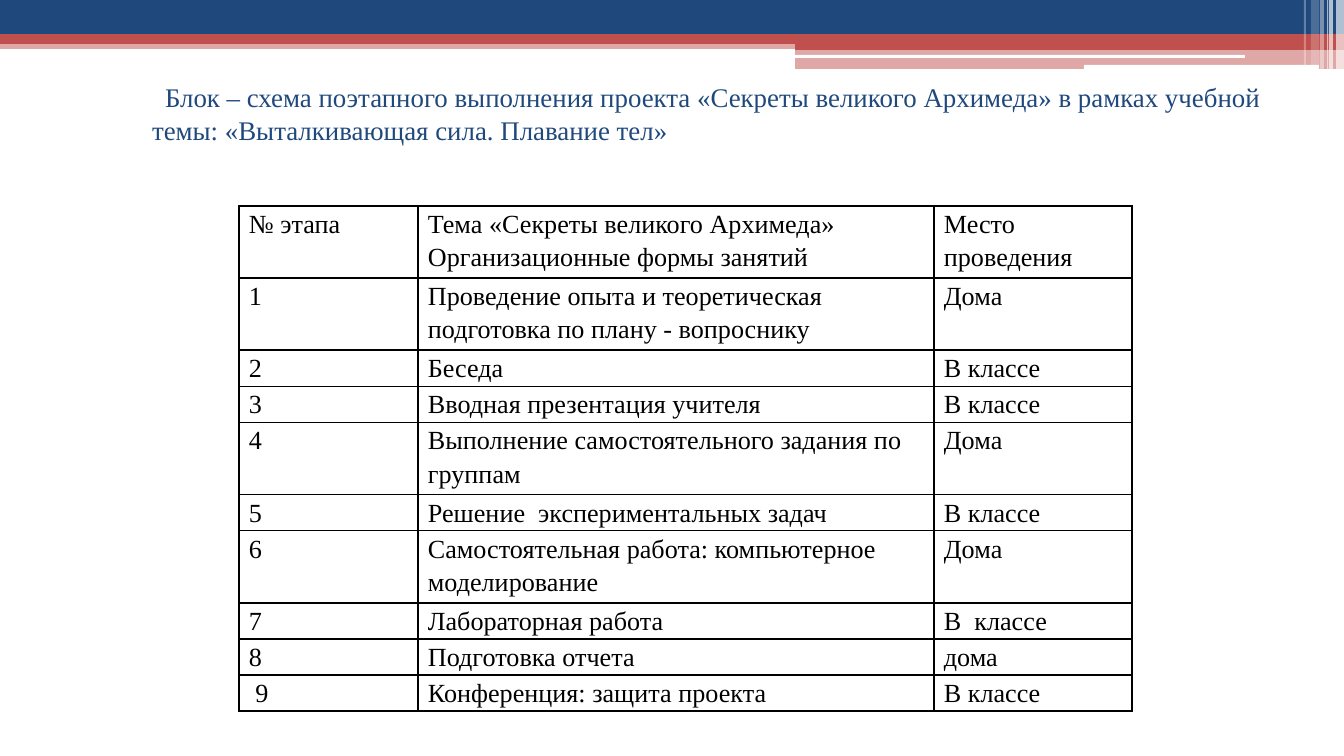
from pptx import Presentation as Deck
from pptx.dml.color import RGBColor as Rgb
from pptx.enum.shapes import MSO_SHAPE as Form
from pptx.enum.text import MSO_ANCHOR as Anchor
from pptx.oxml import parse_xml as parse
from pptx.oxml.ns import nsdecls as names, qn
from pptx.util import Pt
from lxml.etree import SubElement as Sub

PX = 914400 / 134.4
theme = {
    "font": "Times New Roman", "title": 14.4, "body": 14,
    "navy": "1F497D", "red": "C0504D", "white": "FFFFFF", "black": "000000",
}


def px(*sizes):
    return [round(size * PX) for size in sizes]


def style(par, size, color):
    for run in par.runs:
        run.font.name = theme["font"]
        run.font.size = Pt(theme[size])
        run.font.color.rgb = Rgb.from_string(theme[color])


deck = Deck()
deck.slide_width, deck.slide_height = px(1344, 756)
slide = deck.slides.add_slide(deck.slide_layouts[6])
shapes = slide.shapes

bands = [
    (Form.RECTANGLE, 0, 40, 1344, 9, "red", 50),
    (Form.RECTANGLE, 0, 0, 1344, 34, "navy", 100),
    (Form.RECTANGLE, 0, 34, 1344, 10, "red", 100),
    (Form.RECTANGLE, 795, 40, 549, 10, "red", 100),
    (Form.RECTANGLE, 795, 49, 549, 20, "red", 50),
    (Form.ROUNDED_RECTANGLE, 795, 55, 450, 3, "white", 100),
    (Form.ROUNDED_RECTANGLE, 1084, 65, 235, 4, "white", 100),
]
stripes = [
    (1336, 8, 69, 65), (1329, 4, 69, 65), (1327, 1, 69, 60),
    (1320, 4, 69, 40), (1311, 8, 65, 20), (1304, 2, 65, 30),
]
for left, wide, high, alpha in stripes:
    bands.append((Form.RECTANGLE, left, 0, wide, high, "white", alpha))

for form, left, top, wide, high, color, alpha in bands:
    band = shapes.add_shape(form, *px(left, top, wide, high))
    band.shadow.inherit = False
    band.line.fill.background()
    band.fill.solid()
    band.fill.fore_color.rgb = Rgb.from_string(theme[color])
    if alpha < 100:
        tint = band.fill._xPr.find(".//" + qn("a:srgbClr"))
        Sub(tint, qn("a:alpha")).set("val", str(alpha * 1000))

title = shapes.add_textbox(*px(138, 81, 1138, 85))
frame = title.text_frame
frame.word_wrap = True
frame.vertical_anchor = Anchor.TOP
frame.margin_left, frame.margin_right = px(14, 10)
frame.margin_top = frame.margin_bottom = 0
frame.text = (
    "Блок – схема поэтапного выполнения проекта «Секреты великого Архимеда» "
    "в рамках учебной темы: «Выталкивающая сила. Плавание тел»"
)
head = frame.paragraphs[0]
head._p.get_or_add_pPr().set("indent", str(px(13)[0]))
style(head, "title", "navy")

rows = [
    ("№ этапа", "Тема «Секреты великого Архимеда»\nОрганизационные формы занятий", "Место проведения"),
    ("1", "Проведение опыта и теоретическая подготовка по плану - вопроснику", "Дома"),
    ("2", "Беседа", "В классе"),
    ("3", "Вводная презентация учителя", "В классе"),
    ("4", "Выполнение самостоятельного задания по группам", "Дома"),
    ("5", "Решение  экспериментальных задач", "В классе"),
    ("6", "Самостоятельная работа: компьютерное моделирование", "Дома"),
    ("7", "Лабораторная работа", "В  классе"),
    ("8", "Подготовка отчета", "дома"),
    (" 9", "Конференция: защита проекта", "В классе"),
]
double = {0, 1, 4, 6}
line = 33
wides = (179, 516, 198)
high = line * (len(rows) + len(double))
table = shapes.add_table(len(rows), len(wides), *px(239, 206, sum(wides), high)).table
table.first_row = table.horz_banding = False
for col, wide in zip(table.columns, px(*wides)):
    col.width = wide

for r, texts in enumerate(rows):
    table.rows[r].height = px(line * (2 if r in double else 1))[0]
    for c, text in enumerate(texts):
        cell = table.cell(r, c)
        cell.margin_left, cell.margin_right = px(10, 10)
        cell.margin_top = cell.margin_bottom = 0
        cell.text_frame.text = text
        for par in cell.text_frame.paragraphs:
            par.line_spacing = 1.15
            style(par, "body", "black")
        props = cell._tc.get_or_add_tcPr()
        for side in "LRTB":
            props.append(parse(
                f'<a:ln{side} {names("a")} w="{Pt(1)}"><a:solidFill>'
                f'<a:srgbClr val="{theme["black"]}"/></a:solidFill></a:ln{side}>'
            ))
        cell.fill.background()

deck.save("out.pptx")
